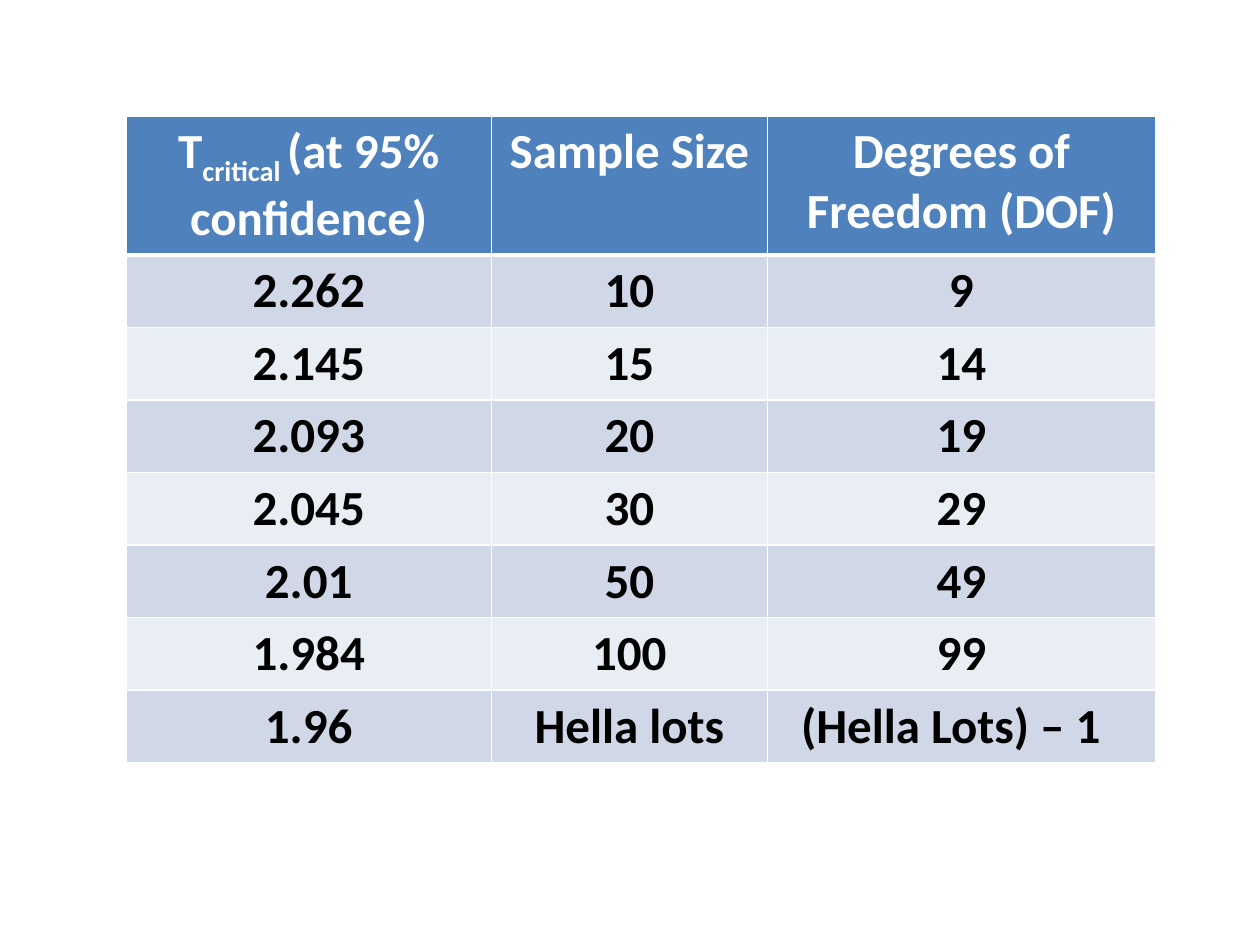
from lxml.etree import SubElement
from pptx import Presentation
from pptx.dml.color import RGBColor
from pptx.enum.text import PP_ALIGN
from pptx.oxml.ns import qn
from pptx.util import Inches, Pt

WHITE = RGBColor(0xFF, 0xFF, 0xFF)
BLACK = RGBColor(0x00, 0x00, 0x00)
HEADER_BLUE = RGBColor(0x4F, 0x81, 0xBD)
BANDS = (RGBColor(0xD0, 0xD8, 0xE8), RGBColor(0xE9, 0xED, 0xF4))

COLUMN_WIDTHS = (2.9, 2.19, 3.08)
HEADER_HEIGHT, ROW_HEIGHT = 1.09, 0.57
THIN, THICK = 1, 3

# Each cell is a list of (text, baseline shift in percent) runs
HEADER = (
    [("T", 0), ("critical ", -25), ("(at 95% confidence)", 0)],
    [("Sample Size", 0)],
    [("Degrees of Freedom (DOF)", 0)],
)
ROWS = (
    ("2.262", "10", "9"),
    ("2.145", "15", "14"),
    ("2.093", "20", "19"),
    ("2.045", "30", "29"),
    ("2.01", "50", "49"),
    ("1.984", "100", "99"),
    ("1.96", "Hella lots", "(Hella Lots) – 1"),
)


def set_borders(cell, top=THIN, bottom=THIN):
    """Draw white lines on all four sides; widths are in points."""
    properties = cell._tc.get_or_add_tcPr()
    sides = (("lnL", THIN), ("lnR", THIN), ("lnT", top), ("lnB", bottom))
    for position, (side, width) in enumerate(sides):
        line = SubElement(properties, qn(f"a:{side}"), w=str(Pt(width)))
        fill = SubElement(line, qn("a:solidFill"))
        SubElement(fill, qn("a:srgbClr"), val=str(WHITE))
        properties.insert(position, line)  # lines come before the fill


def fill_cell(cell, runs, background, color):
    cell.fill.solid()
    cell.fill.fore_color.rgb = background
    paragraph = cell.text_frame.paragraphs[0]
    paragraph.alignment = PP_ALIGN.CENTER
    for text, baseline in runs:
        run = paragraph.add_run()
        run.text = text
        font = run.font
        font.name, font.size, font.bold = "Calibri", Pt(28), True
        font.color.rgb = color
        if baseline:
            font._element.set("baseline", str(baseline * 1000))


def add_critical_value_table(slide):
    height = HEADER_HEIGHT + ROW_HEIGHT * len(ROWS)
    frame = slide.shapes.add_table(
        len(ROWS) + 1, len(COLUMN_WIDTHS),
        Inches(1), Inches(0.92), Inches(sum(COLUMN_WIDTHS)), Inches(height))
    table = frame.table
    for column, width in zip(table.columns, COLUMN_WIDTHS):
        column.width = Inches(width)
    for row in table.rows:
        row.height = Inches(ROW_HEIGHT)
    table.rows[0].height = Inches(HEADER_HEIGHT)

    # Header row
    for cell, runs in zip(table.rows[0].cells, HEADER):
        fill_cell(cell, runs, HEADER_BLUE, WHITE)
        set_borders(cell, bottom=THICK)

    # Banded body rows
    for index, values in enumerate(ROWS):
        for cell, value in zip(table.rows[index + 1].cells, values):
            fill_cell(cell, [(value, 0)], BANDS[index % 2], BLACK)
            set_borders(cell, top=THIN if index else THICK)

    # The last entry sits a little left of centre
    table.cell(len(ROWS), 2).margin_right = Inches(0.27)


def main():
    presentation = Presentation()
    presentation.slide_width, presentation.slide_height = Inches(10), Inches(7.5)
    slide = presentation.slides.add_slide(presentation.slide_layouts[6])
    add_critical_value_table(slide)
    presentation.save("out.pptx")


if __name__ == "__main__":
    main()
